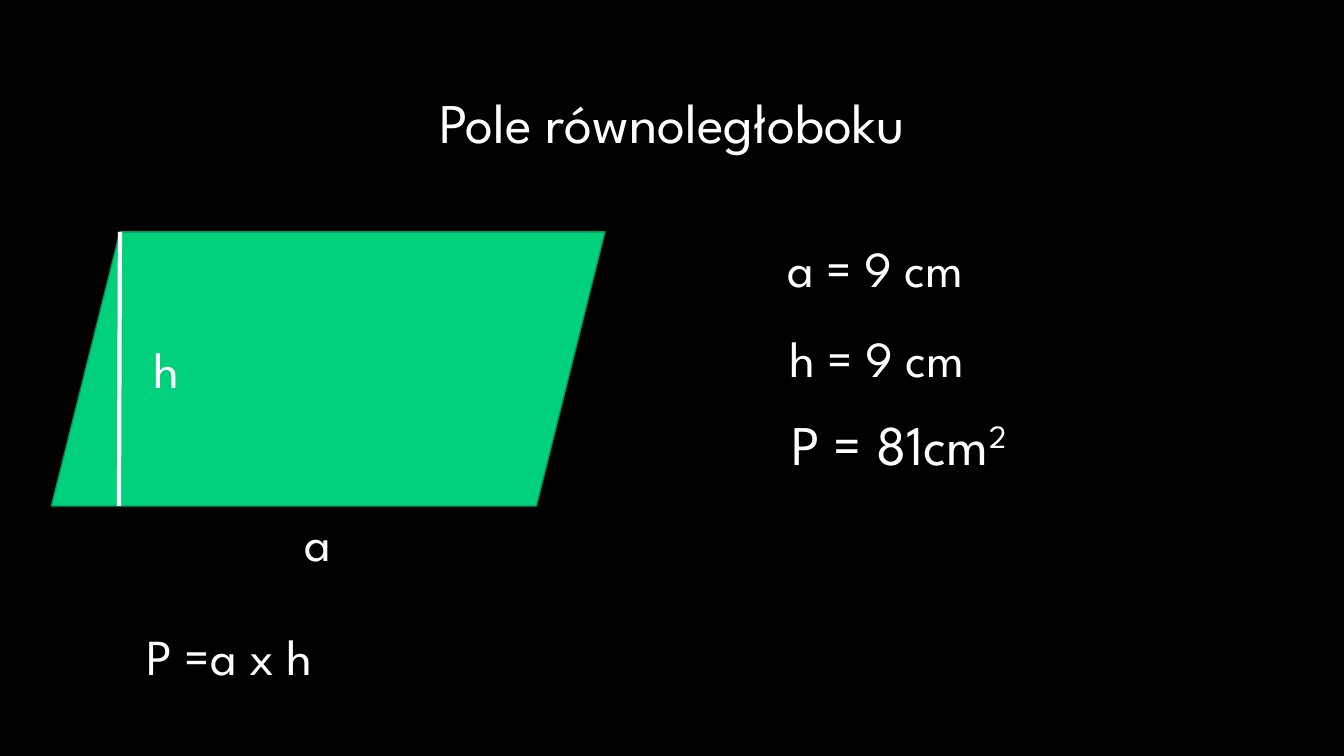
from dataclasses import dataclass

from lxml import etree
from pptx import Presentation
from pptx.dml.color import RGBColor
from pptx.enum.shapes import MSO_CONNECTOR, MSO_SHAPE
from pptx.enum.text import MSO_AUTO_SIZE, PP_ALIGN
from pptx.oxml.ns import qn
from pptx.slide import Slide
from pptx.util import Inches, Pt


@dataclass(frozen=True)
class Theme:
    font: str = "League Spartan"
    background: RGBColor = RGBColor(0x00, 0x00, 0x00)
    text: RGBColor = RGBColor(0xFF, 0xFF, 0xFF)
    fill: RGBColor = RGBColor(0x01, 0xD1, 0x7D)
    outline: RGBColor = RGBColor(0x01, 0x9B, 0x5C)
    large: int = 40
    normal: int = 36


@dataclass(frozen=True)
class Label:
    text: str
    left: float
    top: float
    width: float
    height: float = 0.71
    size: int = 36
    align: PP_ALIGN = PP_ALIGN.LEFT
    superscript: str = ""


THEME = Theme(normal=36)
SLIDE_W, SLIDE_H = 13.33, 7.5
SHAPE_LEFT, SHAPE_TOP, SHAPE_W, SHAPE_H = 0.51, 2.3, 5.49, 2.72
SHAPE_BOTTOM = SHAPE_TOP + SHAPE_H

LABELS = [
    # Title
    Label("Pole równoległoboku", 0, 0.82, SLIDE_W, 0.77, THEME.large, PP_ALIGN.CENTER),
    # Figure labels and formula
    Label("h", 1.42, 3.31, 0.5),
    Label("a", 2.92, SHAPE_BOTTOM, 0.66),
    Label("P =a x h", 1.35, 6.15, 2.11),
    # Given values and result
    Label("a = 9 cm", 7.71, SHAPE_TOP, 3.87),
    Label("h = 9 cm", 7.73, 3.2, 3.98),
    Label("P = 81cm", 7.75, 4.01, 3.95, 0.77, THEME.large, superscript="2"),
]


def add_text(s: Slide, text: str, *, left: float, top: float, width: float,
             height: float, size: int, align: PP_ALIGN, superscript: str) -> None:
    box = s.shapes.add_textbox(Inches(left), Inches(top), Inches(width), Inches(height))
    tf = box.text_frame
    tf.word_wrap = True
    tf.auto_size = MSO_AUTO_SIZE.SHAPE_TO_FIT_TEXT
    p = tf.paragraphs[0]
    p.alignment = align
    for part in filter(None, (text, superscript)):
        r = p.add_run()
        r.text = part
        r.font.name = THEME.font
        r.font.size = Pt(size)
        r.font.color.rgb = THEME.text
    if superscript:
        r.font._element.set("baseline", "30000")


def add_label(s: Slide, label: Label) -> None:
    add_text(s, label.text, left=label.left, top=label.top, width=label.width,
             height=label.height, size=label.size, align=label.align,
             superscript=label.superscript)


def add_parallelogram(s: Slide) -> None:
    sp = s.shapes.add_shape(MSO_SHAPE.PARALLELOGRAM, Inches(SHAPE_LEFT), Inches(SHAPE_TOP),
                            Inches(SHAPE_W), Inches(SHAPE_H))
    sp.shadow.inherit = False
    sp.fill.solid()
    sp.fill.fore_color.rgb = THEME.fill
    sp.line.color.rgb = THEME.outline
    sp.line.width = Pt(1)


def add_height_line(s: Slide) -> None:
    line = s.shapes.add_connector(MSO_CONNECTOR.STRAIGHT, Inches(1.19), Inches(SHAPE_TOP),
                                  Inches(1.18), Inches(SHAPE_BOTTOM))
    line.line.color.rgb = THEME.text
    line.line.width = Pt(3)
    etree.SubElement(line._element.spPr, qn("a:effectLst"))


def main() -> None:
    prs = Presentation()
    prs.slide_width, prs.slide_height = Inches(SLIDE_W), Inches(SLIDE_H)
    s = prs.slides.add_slide(prs.slide_layouts[6])
    s.background.fill.solid()
    s.background.fill.fore_color.rgb = THEME.background

    # Figure
    add_parallelogram(s)
    add_height_line(s)

    # Text
    for label in LABELS:
        add_label(s, label)

    prs.save("out.pptx")


if __name__ == "__main__":
    main()
